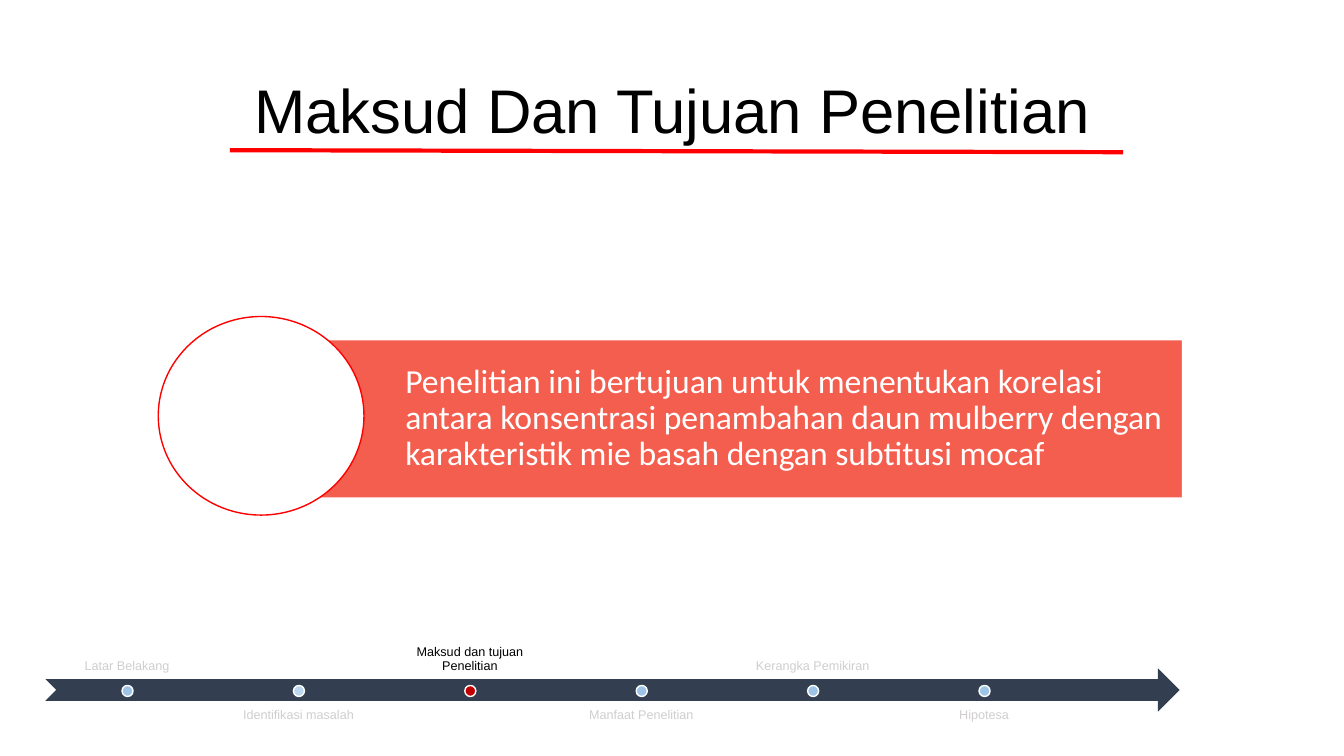
from lxml import etree
from pptx import Presentation
from pptx import util as u
from pptx.dml.color import RGBColor
from pptx.enum import shapes, text
from pptx.oxml.ns import qn

PX = 9144
COLORS = {
    "white": "FFFFFF",
    "black": "000000",
    "red": "FF0000",
    "coral": "F45E4E",
    "navy": "333F50",
    "grey": "D0CECE",
    "blue": "9DC3E6",
    "pale_blue": "BDD7EE",
    "dark_red": "C00000",
}
STAGES = [
    ("Latar Belakang", "grey", "blue"),
    ("Identifikasi masalah", "grey", "pale_blue"),
    ("Maksud dan tujuan Penelitian", "black", "dark_red"),
    ("Manfaat Penelitian", "grey", "blue"),
    ("Kerangka Pemikiran", "grey", "blue"),
    ("Hipotesa", "grey", "blue"),
]


def px(*lengths):
    return [u.Emu(length * PX) for length in lengths]


def color(name):
    return RGBColor.from_string(COLORS[name])


def add_shape(slide, kind, box, fill, line=None):
    shape = slide.shapes.add_shape(kind, *px(*box))
    shape.shadow.inherit = False
    shape.fill.solid()
    shape.fill.fore_color.rgb = color(fill)
    if line:
        shape.line.color.rgb = color(line)
        shape.line.width = u.Pt(1)
    else:
        shape.line.fill.background()
    return shape


def add_text(slide, box, wording, size, font, ink, insets,
             align=text.PP_ALIGN.CENTER, anchor=text.MSO_ANCHOR.MIDDLE):
    frame = slide.shapes.add_textbox(*px(*box)).text_frame
    frame.word_wrap = True
    frame.vertical_anchor = anchor
    (frame.margin_left, frame.margin_top,
     frame.margin_right, frame.margin_bottom) = px(*insets)
    paragraph = frame.paragraphs[0]
    paragraph.text = wording
    paragraph.alignment = align
    paragraph.line_spacing = 0.9
    paragraph.font.size = u.Pt(size)
    paragraph.font.name = font
    paragraph.font.color.rgb = color(ink)


def add_title(slide, left, top, width, height):
    add_text(slide, (left, top, width, height), "Maksud Dan Tujuan Penelitian",
             44, "Arial", "black", (10, 5, 10, 5))
    underline = slide.shapes.add_connector(
        shapes.MSO_CONNECTOR.STRAIGHT,
        *px(left + 136, top + 109, left + 1022, top + 111))
    underline.line.color.rgb = color("red")
    underline.line.width = u.Pt(3)
    etree.SubElement(underline.element.spPr, qn("a:effectLst"))


def add_purpose(slide, left, top, width, height):
    banner_top, banner_height = top + 23, 157
    banner = add_shape(slide, shapes.MSO_SHAPE.PENTAGON,
                       (left + 25, banner_top, width - 25, banner_height),
                       "coral", "white")
    banner.rotation = 180
    add_text(slide, (left + 64, banner_top, width - 64, banner_height),
             "Penelitian ini bertujuan untuk menentukan korelasi antara "
             "konsentrasi penambahan daun mulberry dengan karakteristik "
             "mie basah dengan subtitusi mocaf",
             24, "Calibri", "white", (181, 10, 19, 10), text.PP_ALIGN.LEFT)
    add_shape(slide, shapes.MSO_SHAPE.OVAL, (left, top, 204, height),
              "white", "red")


def add_timeline(slide, left, top, width, height):
    label_width, label_height, pitch, dot = 162, 43, 170, 11
    arrow_top = top + 31
    add_shape(slide, shapes.MSO_SHAPE.NOTCHED_RIGHT_ARROW,
              (left, arrow_top, width, 43), "navy")
    for index, (label, ink, dot_fill) in enumerate(STAGES):
        label_left = left + index * pitch
        above = index % 2 == 0
        label_top = top if above else top + height - label_height
        anchor = text.MSO_ANCHOR.BOTTOM if above else text.MSO_ANCHOR.TOP
        add_text(slide, (label_left, label_top, label_width, label_height),
                 label, 9, "Arial", ink, (7, 7, 7, 7), anchor=anchor)
        add_shape(slide, shapes.MSO_SHAPE.OVAL,
                  (label_left + 76, arrow_top + 17, dot, dot),
                  dot_fill, "white")


def main():
    presentation = Presentation()
    presentation.slide_width, presentation.slide_height = px(1333, 750)
    slide = presentation.slides.add_slide(presentation.slide_layouts[6])
    add_title(slide, 92, 40, 1150, 145)
    add_purpose(slide, 157, 314, 1016, 197)
    add_timeline(slide, 45, 632, 1125, 107)
    presentation.save("out.pptx")


if __name__ == "__main__":
    main()
